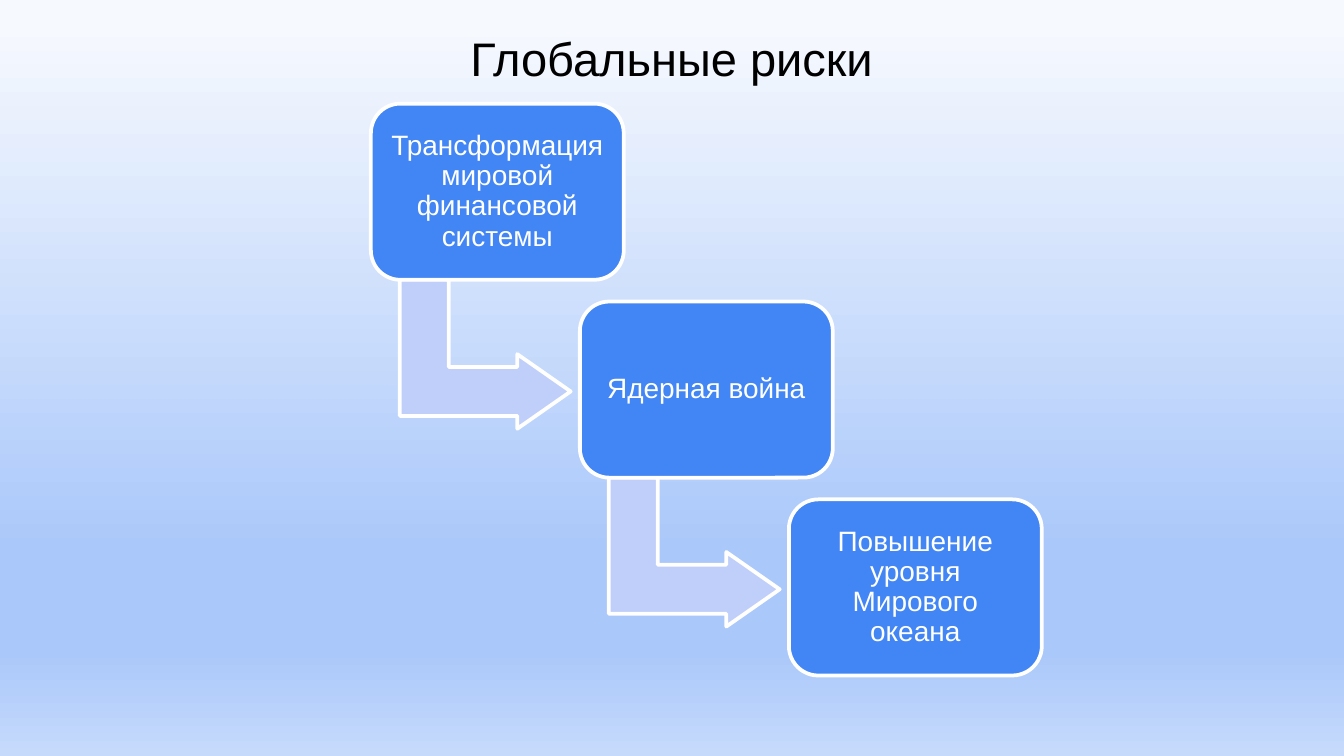
from lxml.etree import SubElement
from pptx import Presentation
from pptx.dml.color import RGBColor
from pptx.enum.shapes import MSO_SHAPE as Shape
from pptx.enum.text import MSO_ANCHOR as Anchor, PP_ALIGN as Align
from pptx.oxml.ns import qn
from pptx.util import Cm, Pt

BLACK = RGBColor(0x00, 0x00, 0x00)
WHITE = RGBColor(0xFF, 0xFF, 0xFF)
BLUE = RGBColor(0x42, 0x85, 0xF4)
LAVENDER = RGBColor(0xC0, 0xCE, 0xFA)
SKY = RGBColor(0xAA, 0xC8, 0xFA)
SKY_STOPS = [
    (3, RGBColor(0xF6, 0xF9, 0xFE)),
    (73, SKY),
    (86, SKY),
    (100, RGBColor(0xC6, 0xDA, 0xFC)),
]

RISKS = [
    "Трансформация мировой финансовой системы",
    "Ядерная война",
    "Повышение уровня Мирового океана",
]

# Staircase geometry in centimetres
FIRST_LEFT, FIRST_TOP = 7.01, 1.96
STEP_X, STEP_Y = 3.95, 3.74
CARD_W, CARD_H = 4.78, 3.33
ARROW_DX, ARROW_DY = 0.75, 3.12
ARROW_W, ARROW_H = 2.82, 3.23


def paint_background(slide):
    fill = slide.background.fill
    fill.gradient()
    fill.gradient_angle = 270
    stops = slide.element.find(".//" + qn("a:gsLst"))
    for stop in list(stops):
        stops.remove(stop)
    for percent, color in SKY_STOPS:
        stop = SubElement(stops, qn("a:gs"), pos=str(percent * 1000))
        SubElement(stop, qn("a:srgbClr"), val=str(color))


def write_text(shape, text, *, size, color, inset, anchor, spacing=1.0):
    frame = shape.text_frame
    frame.word_wrap = True
    frame.vertical_anchor = anchor
    frame.margin_left = frame.margin_right = Cm(inset)
    frame.margin_top = frame.margin_bottom = Cm(inset)
    paragraph = frame.paragraphs[0]
    paragraph.alignment = Align.CENTER
    paragraph.line_spacing = spacing
    run = paragraph.add_run()
    run.text = text
    run.font.name = "Arial"
    run.font.size = Pt(size)
    run.font.color.rgb = color


def add_outlined(slide, kind, left, top, width, height, color, adjustments):
    shape = slide.shapes.add_shape(kind, Cm(left), Cm(top), Cm(width), Cm(height))
    shape.shadow.inherit = False
    shape.fill.solid()
    shape.fill.fore_color.rgb = color
    shape.line.color.rgb = WHITE
    shape.line.width = Pt(2)
    for index, value in enumerate(adjustments):
        shape.adjustments[index] = value
    return shape


def add_title(slide, text):
    title = slide.shapes.add_textbox(Cm(0.86), Cm(0.28), Cm(23.67), Cm(1.6))
    write_text(title, text, size=25.2, color=BLACK, inset=0.25, anchor=Anchor.BOTTOM)


def add_step_arrow(slide, left, top):
    arrow = add_outlined(slide, Shape.BENT_UP_ARROW, left + ARROW_DX, top + ARROW_DY,
                         ARROW_W, ARROW_H, LAVENDER, (0.328, 0.25, 0.358))
    arrow.rotation = 90


def add_risk_card(slide, left, top, text):
    card = add_outlined(slide, Shape.ROUNDED_RECTANGLE, left, top,
                        CARD_W, CARD_H, BLUE, (0.167,))
    write_text(card, text, size=15, color=WHITE, inset=0.16,
               anchor=Anchor.MIDDLE, spacing=0.9)


def main():
    deck = Presentation()
    deck.slide_width, deck.slide_height = Cm(25.4), Cm(14.29)
    slide = deck.slides.add_slide(deck.slide_layouts[6])
    paint_background(slide)
    add_title(slide, "Глобальные риски")

    # Each risk leads down to the next one
    for step, risk in enumerate(RISKS):
        left, top = FIRST_LEFT + step * STEP_X, FIRST_TOP + step * STEP_Y
        if step < len(RISKS) - 1:
            add_step_arrow(slide, left, top)
        add_risk_card(slide, left, top, risk)

    deck.save("out.pptx")


if __name__ == "__main__":
    main()
